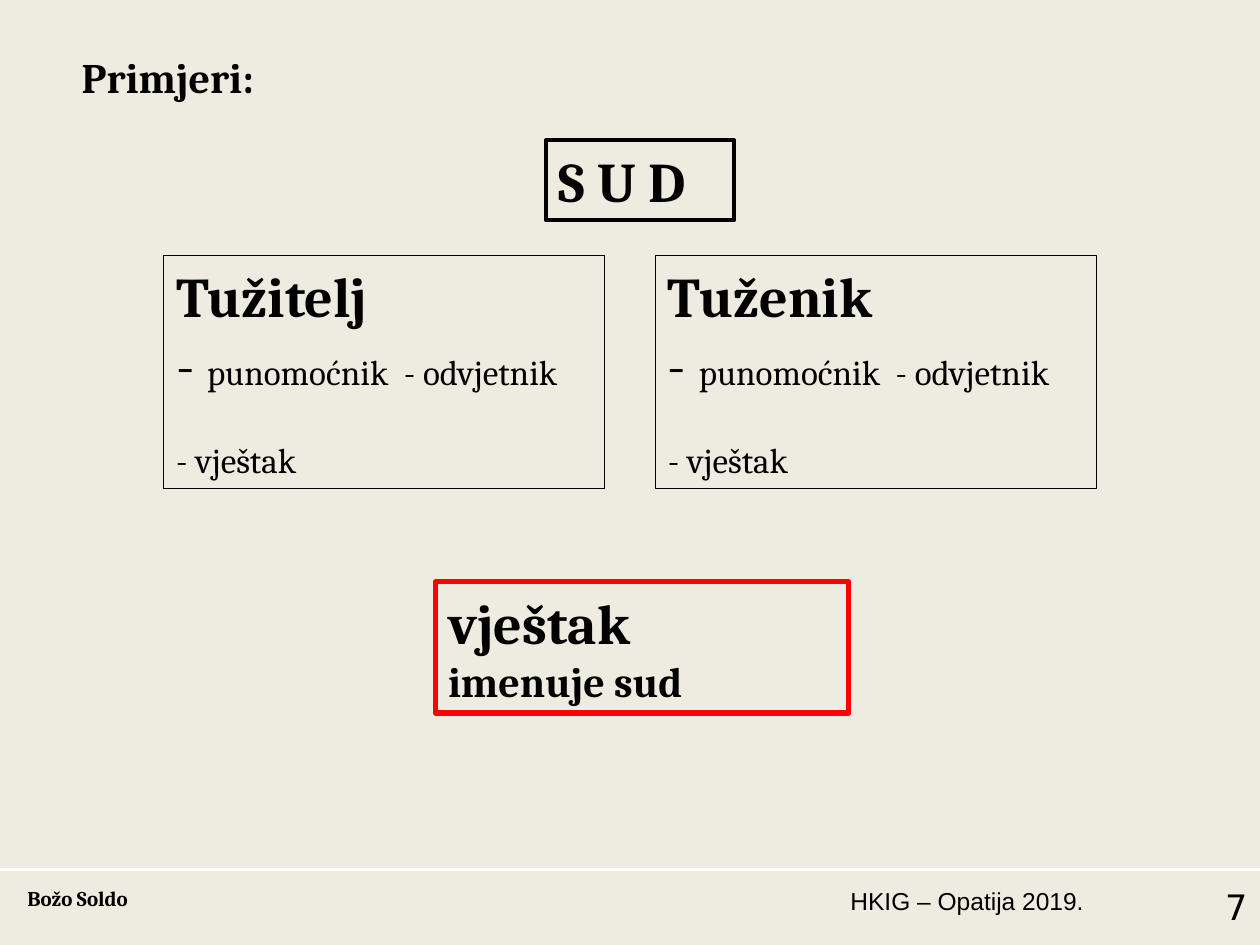
"""Build the court, parties and expert witness slide."""
from dataclasses import dataclass

from pptx import Presentation
from pptx.dml.color import RGBColor
from pptx.enum.shapes import MSO_CONNECTOR as CONN, MSO_SHAPE as SHAPE
from pptx.enum.text import MSO_ANCHOR as ANCHOR, MSO_AUTO_SIZE as AUTO, PP_ALIGN as AL
from pptx.oxml.ns import qn
from pptx.util import Pt

BLACK = RGBColor(0x00, 0x00, 0x00)
WHITE = RGBColor(0xFF, 0xFF, 0xFF)
RED = RGBColor(0xFF, 0x00, 0x00)
CREAM = RGBColor(0xEE, 0xEC, 0xE1)
W, H = 720, 540
FOOT_Y, FOOT_H = 502.5, 37.5


@dataclass
class Box:
    x: float
    y: float
    w: float
    h: float


@dataclass
class Run:
    text: str
    size: float
    bold: bool = True


@dataclass
class Frame:
    box: Box
    lines: list[list[Run]]
    color: RGBColor
    weight: float


def place(sp, box: Box) -> None:
    """Put a shape at the given box."""
    sp.left, sp.top, sp.width, sp.height = (Pt(v) for v in (box.x, box.y, box.w, box.h))


def prepare(tf) -> None:
    """Give a text frame wrapping, top anchoring and a fixed size."""
    tf.word_wrap = True
    tf.auto_size = AUTO.NONE
    tf.vertical_anchor = ANCHOR.TOP


def write(p, text: str, *, size: float, bold: bool = False, font: str = "Cambria",
          align=AL.LEFT, before: float = 0) -> None:
    """Add a formatted run to a paragraph."""
    p.alignment, p.space_before = align, Pt(before)
    r = p.add_run()
    r.text = text
    r.font.name, r.font.size, r.font.bold = font, Pt(size), bold
    r.font.color.rgb = BLACK


def outline(sp, color: RGBColor, weight: float) -> None:
    """Leave a shape unfilled and draw its border."""
    sp.fill.background()
    sp.line.color.rgb, sp.line.width = color, Pt(weight)


def draw_frame(s, frame: Frame) -> None:
    """Draw a bordered rectangle with lines of text."""
    sp = s.shapes.add_shape(SHAPE.RECTANGLE, 0, 0, 0, 0)
    sp.shadow.inherit = False
    place(sp, frame.box)
    outline(sp, frame.color, frame.weight)
    tf = sp.text_frame
    prepare(tf)
    for i, line in enumerate(frame.lines):
        p = tf.add_paragraph() if i else tf.paragraphs[0]
        for run in line:
            write(p, run.text, size=run.size, bold=run.bold)


def draw_party(sp, name: str, x: float) -> None:
    """Fill a body placeholder with one party and its helpers."""
    place(sp, Box(x, 146, 252, 133))
    outline(sp, BLACK, 0.75)
    tf = sp.text_frame
    prepare(tf)
    lines = [([Run(name, 32)], 0),
             ([Run("- ", 32, False), Run("punomoćnik  - odvjetnik", 20, False)], 0),
             ([Run("- vještak", 20, False)], 24)]
    for i, (runs, before) in enumerate(lines):
        p = tf.add_paragraph() if i else tf.paragraphs[0]
        pPr = p._p.get_or_add_pPr()
        pPr.set("marL", "0")
        pPr.set("indent", "0")
        pPr.append(pPr.makeelement(qn("a:buNone"), {}))
        for run in runs:
            write(p, run.text, size=run.size, bold=run.bold, before=before)


def draw_footer(s, text: str, x: float, w: float, **fmt) -> None:
    """Write one footer text."""
    tf = s.shapes.add_textbox(Pt(x), Pt(FOOT_Y), Pt(w), Pt(FOOT_H)).text_frame
    prepare(tf)
    write(tf.paragraphs[0], text, **fmt)


def main() -> None:
    """Build and save the slide."""
    prs = Presentation()
    prs.slide_width, prs.slide_height = Pt(W), Pt(H)
    s = prs.slides.add_slide(prs.slide_layouts[3])
    s.background.fill.solid()
    s.background.fill.fore_color.rgb = CREAM

    title, left, right = list(s.placeholders)[:3]
    place(title, Box(39.5, 26, 626.5, 65.5))
    prepare(title.text_frame)
    write(title.text_frame.paragraphs[0], "Primjeri:", size=24, bold=True, align=AL.JUSTIFY)
    for sp, name, x in ((left, "Tužitelj", 93.5), (right, "Tuženik", 374.5)):
        draw_party(sp, name, x)

    for frame in (
        Frame(Box(312, 80, 107.5, 46), [[Run("S U D", 32)]], BLACK, 2.25),
        Frame(Box(249, 332.5, 236, 75), [[Run("vještak", 32)], [Run("imenuje sud", 24)]], RED, 3),
    ):
        draw_frame(s, frame)

    rule = s.shapes.add_connector(CONN.STRAIGHT, 0, Pt(497), Pt(W), Pt(497))
    rule.line.color.rgb, rule.line.width = WHITE, Pt(1.5)
    spPr = rule._element.spPr
    spPr.append(spPr.makeelement(qn("a:effectLst"), {}))

    draw_footer(s, "Božo Soldo", 8.5, 156, size=12, bold=True)
    draw_footer(s, "HKIG – Opatija 2019.", 473, 153.5, size=14, font="Arial", align=AL.RIGHT)
    draw_footer(s, "7", 632, 88, size=20, font="DejaVu Sans", align=AL.RIGHT)
    prs.save("out.pptx")


if __name__ == "__main__":
    main()
